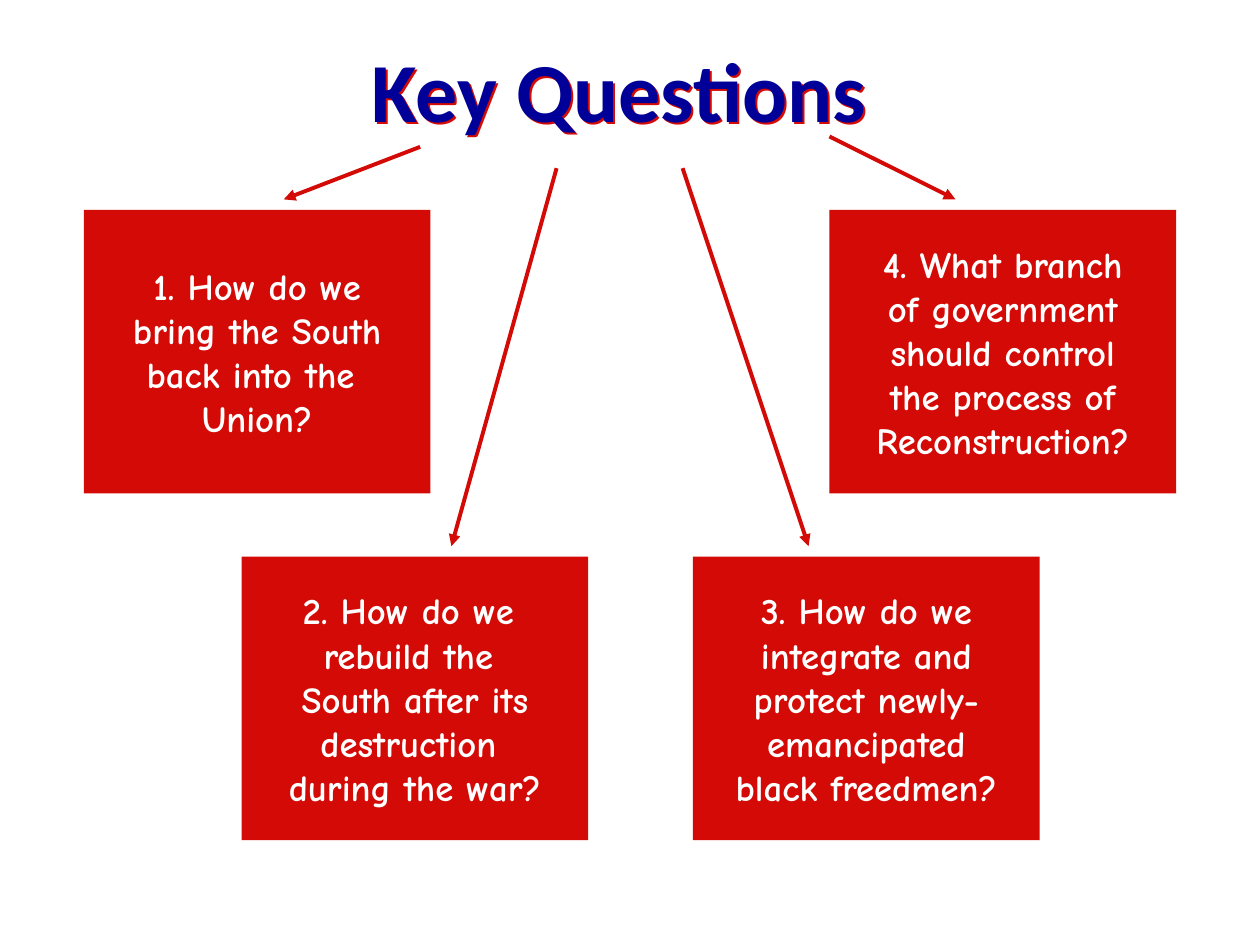
from dataclasses import dataclass

from lxml.etree import SubElement
from pptx import Presentation
from pptx.dml.color import RGBColor
from pptx.enum.shapes import MSO_CONNECTOR, MSO_SHAPE
from pptx.enum.text import MSO_ANCHOR, MSO_AUTO_SIZE, PP_ALIGN
from pptx.oxml.ns import qn
from pptx.util import Cm, Pt


@dataclass(frozen=True)
class Theme:
    red: RGBColor = RGBColor(0xD3, 0x0A, 0x05)
    navy: RGBColor = RGBColor(0x00, 0x00, 0x99)
    white: RGBColor = RGBColor(0xFF, 0xFF, 0xFF)
    title_font: str = "Calibri"
    question_font: str = "Comic Neue"
    title_size: Pt = Pt(48)
    question_size: Pt = Pt(21)
    arrow_width: Pt = Pt(2.25)


THEME = Theme()
BOX_WIDTH, BOX_HEIGHT = Cm(6.99), Cm(5.72)
UPPER_ROW, LOWER_ROW = Cm(4.23), Cm(11.22)

# left, top, wording
QUESTIONS = [
    (Cm(1.69), UPPER_ROW,
     "1. How do we\vbring the South\vback into the \vUnion?"),
    (Cm(4.87), LOWER_ROW,
     "2. How do we \vrebuild the \vSouth after its\vdestruction \vduring the war?"),
    (Cm(13.97), LOWER_ROW,
     "3. How do we\vintegrate and\vprotect newly-\vemancipated\vblack freedmen?"),
    (Cm(16.72), UPPER_ROW,
     "4. What branch\vof government\vshould control\vthe process of\vReconstruction?"),
]

# start x, start y, end x, end y
ARROWS = [
    (Cm(8.47), Cm(2.96), Cm(5.72), Cm(4.02)),
    (Cm(11.22), Cm(3.39), Cm(9.1), Cm(11.01)),
    (Cm(13.76), Cm(3.39), Cm(16.3), Cm(11.01)),
    (Cm(16.72), Cm(2.75), Cm(19.26), Cm(4.02)),
]


def format_text(frame, font_name, size, color):
    for paragraph in frame.paragraphs:
        paragraph.alignment = PP_ALIGN.CENTER
        for run in paragraph.runs:
            run.font.name = font_name
            run.font.size = size
            run.font.bold = True
            run.font.color.rgb = color


def add_hard_shadow(shape, color):
    """Give an unfilled shape's letters a crisp shadow to the lower right."""
    shape.fill.background()
    effects = SubElement(shape.element.spPr, qn("a:effectLst"))
    shadow = SubElement(effects, qn("a:outerShdw"),
                        dist="20500", dir="2700000", algn="ctr", rotWithShape="0")
    SubElement(shadow, qn("a:srgbClr"), val=str(color))


def set_title(slide, wording):
    title = slide.shapes.title
    title.left, title.top = Cm(0.84), Cm(0.64)
    title.width, title.height = Cm(23.28), Cm(2.29)
    frame = title.text_frame
    frame.text = wording
    frame.vertical_anchor = MSO_ANCHOR.TOP
    frame.auto_size = MSO_AUTO_SIZE.SHAPE_TO_FIT_TEXT
    format_text(frame, THEME.title_font, THEME.title_size, THEME.navy)
    add_hard_shadow(title, THEME.red)


def add_question(slide, left, top, wording):
    box = slide.shapes.add_shape(MSO_SHAPE.RECTANGLE, left, top, BOX_WIDTH, BOX_HEIGHT)
    box.shadow.inherit = False
    box.fill.solid()
    box.fill.fore_color.rgb = THEME.red
    box.line.fill.background()
    frame = box.text_frame
    frame.text = wording
    frame.word_wrap = False
    frame.vertical_anchor = MSO_ANCHOR.MIDDLE
    format_text(frame, THEME.question_font, THEME.question_size, THEME.white)


def add_arrow(slide, *ends):
    arrow = slide.shapes.add_connector(MSO_CONNECTOR.STRAIGHT, *ends)
    arrow.line.color.rgb = THEME.red
    arrow.line.width = THEME.arrow_width
    SubElement(arrow.line._get_or_add_ln(), qn("a:tailEnd"), type="triangle")
    SubElement(arrow.element.spPr, qn("a:effectLst"))


def main():
    deck = Presentation()
    deck.slide_width, deck.slide_height = Cm(25.4), Cm(19.05)
    title_only = deck.slide_layouts.get_by_name("Title Only")
    slide = deck.slides.add_slide(title_only)
    set_title(slide, "Key Questions")
    for question in QUESTIONS:
        add_question(slide, *question)
    for ends in ARROWS:
        add_arrow(slide, *ends)
    deck.save("out.pptx")


if __name__ == "__main__":
    main()
